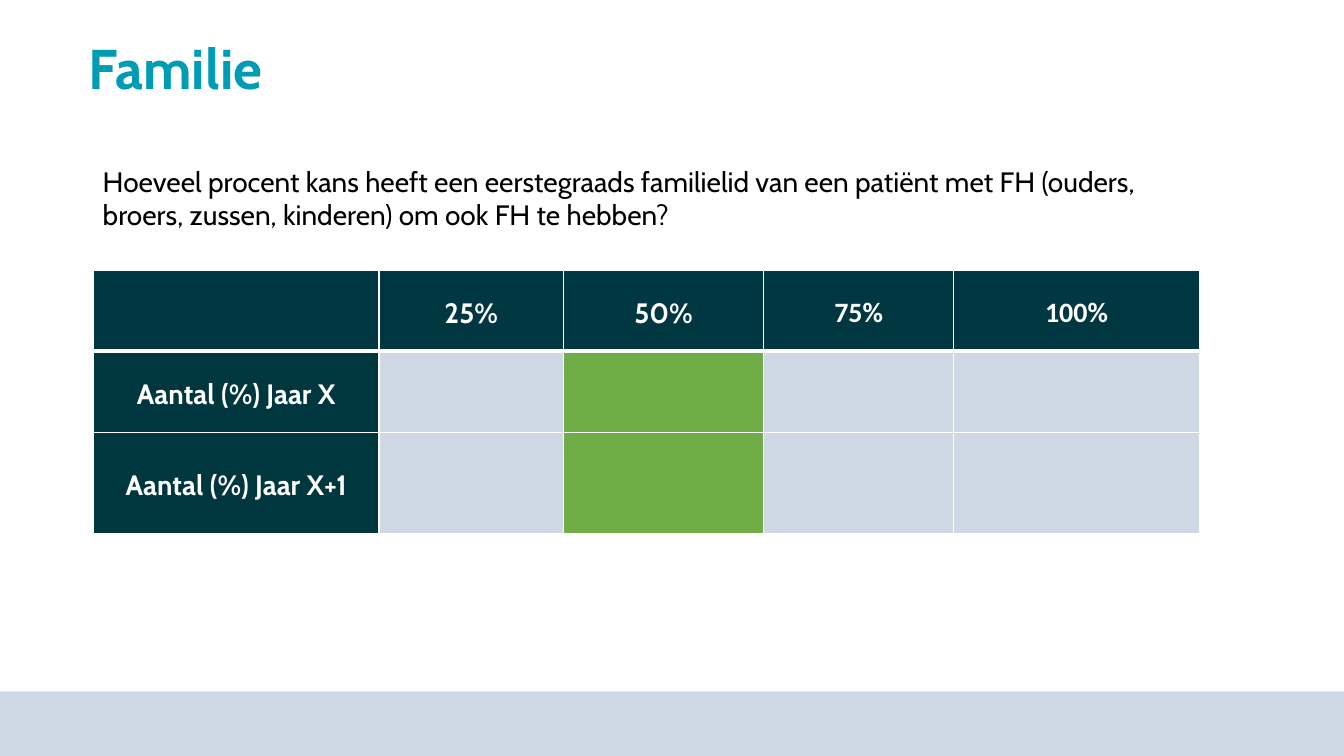
import pptx
import pptx.util
import pptx.dml.color
import pptx.enum.shapes
import pptx.enum.text
import pptx.oxml
import pptx.oxml.ns

Cm = pptx.util.Cm
Pt = pptx.util.Pt
Align = pptx.enum.text.PP_ALIGN
Anchor = pptx.enum.text.MSO_ANCHOR


def color(code):
    return pptx.dml.color.RGBColor.from_string(code)


def write(frame, text, size=20, face="Cabin", ink="FFFFFF", bold=True,
          align=Align.LEFT, space=1.0):
    para = frame.paragraphs[0]
    para.alignment = align
    para.line_spacing = space
    run = para.add_run()
    run.text = text
    run.font.size = Pt(size)
    run.font.name = face
    run.font.bold = bold
    run.font.color.rgb = color(ink)


deck = pptx.Presentation()
deck.slide_width = Cm(33.87)
deck.slide_height = Cm(19.05)
slide = deck.slides.add_slide(deck.slide_layouts[6])

band = slide.shapes.add_shape(
    pptx.enum.shapes.MSO_SHAPE.RECTANGLE, 0, Cm(17.42), Cm(33.87), Cm(1.63))
band.shadow.inherit = False
band.fill.solid()
band.fill.fore_color.rgb = color("CED9E5")
band.line.fill.background()

title = slide.shapes.add_textbox(Cm(1.98), Cm(0.91), Cm(27.13), Cm(1.8)).text_frame
title.word_wrap = True
title.vertical_anchor = Anchor.MIDDLE
write(title, "Familie", size=40, ink="009CB4", space=0.9)

query = slide.shapes.add_textbox(Cm(2.34), Cm(4.01), Cm(28.5), Cm(5.38)).text_frame
query.word_wrap = True
write(query, "Hoeveel procent kans heeft een eerstegraads familielid van een patiënt "
      "met FH (ouders, broers, zussen, kinderen) om ook FH te hebben?",
      ink="000000", bold=False)

widths = [7.19, 4.65, 5.05, 4.78, 6.2]
heights = [2.03, 2.06, 2.54]
rows = [
    ["", "25%", "50%", "75%", "100%"],
    ["Aantal (%) Jaar X", "", "", "", ""],
    ["Aantal (%) Jaar X+1", "", "", "", ""],
]
table = slide.shapes.add_table(
    3, 5, Cm(2.36), Cm(6.81), Cm(sum(widths)), Cm(sum(heights))).table
for col, width in zip(table.columns, widths):
    col.width = Cm(width)
for row, height in zip(table.rows, heights):
    row.height = Cm(height)

for r, row in enumerate(rows):
    for c, text in enumerate(row):
        cell = table.cell(r, c)
        cell.vertical_anchor = Anchor.MIDDLE
        cell.margin_left = cell.margin_right = Cm(0.18)
        cell.margin_top = cell.margin_bottom = 0
        if text:
            face = "Calibri" if c > 2 else "Cabin"
            write(cell.text_frame, text, face=face, align=Align.CENTER, space=1.15)
        if r == 0:
            fill = "003741"
        elif c == 0:
            fill = "00373E"
        else:
            fill = "70AD47" if c == 2 else "CED9E5"
        for side in ("lnL", "lnR", "lnT", "lnB"):
            thick = (r, side) in ((0, "lnB"), (1, "lnT"))
            cell._tc.get_or_add_tcPr().append(pptx.oxml.parse_xml(
                f'<a:{side} {pptx.oxml.ns.nsdecls("a")} w="{Pt(3 if thick else 1)}">'
                f'<a:solidFill><a:srgbClr val="FFFFFF"/></a:solidFill></a:{side}>'))
        cell.fill.solid()
        cell.fill.fore_color.rgb = color(fill)

deck.save("out.pptx")
